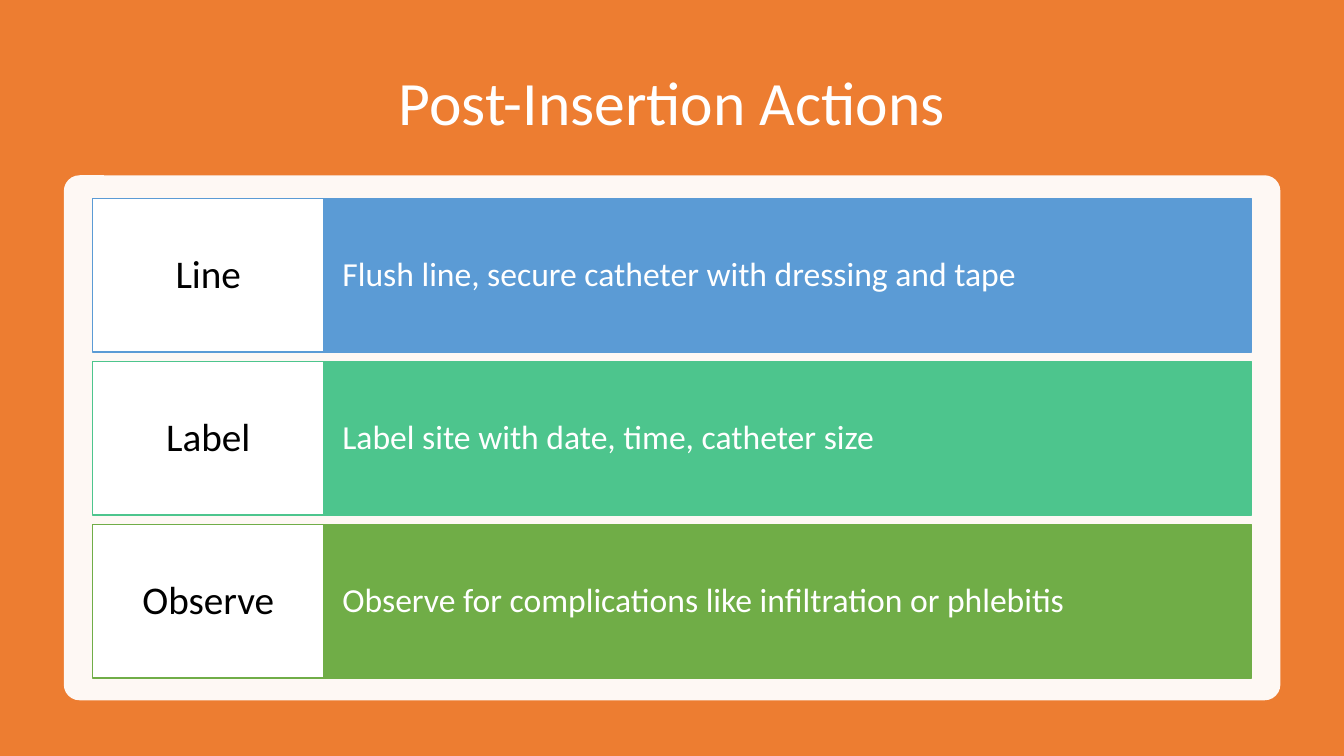
from lxml.etree import SubElement
from pptx import Presentation
from pptx.dml.color import RGBColor
from pptx.enum.shapes import MSO_SHAPE as Shape
from pptx.enum.text import MSO_ANCHOR as Anchor, PP_ALIGN as Align
from pptx.oxml.ns import qn
from pptx.util import Pt

COLORS = {
    "orange": "ED7D31",
    "blue": "5B9BD5",
    "teal": "4DC58D",
    "green": "70AD47",
    "white": "FFFFFF",
    "black": "000000",
}
TITLE = "Post-Insertion Actions"
ACTIONS = [
    ("Line", "Flush line, secure catheter with dressing and tape", "blue"),
    ("Label", "Label site with date, time, catheter size", "teal"),
    ("Observe", "Observe for complications like infiltration or phlebitis", "green"),
]

WIDTH, HEIGHT = 960, 540
LEFT, TOP = 66, 142
NAME_W, TEXT_W = 165.6, 662.4
ROW_H, PITCH = 109.4, 116.4


def color(name):
    return RGBColor.from_string(COLORS[name])


def add_box(kind, x, y, w, h, fill, line=None):
    box = slide.shapes.add_shape(kind, Pt(x), Pt(y), Pt(w), Pt(h))
    box.shadow.inherit = False
    box.fill.solid()
    box.fill.fore_color.rgb = color(fill)
    if line:
        box.line.color.rgb = color(line)
        box.line.width = Pt(1)
    else:
        box.line.fill.background()
    return box


def write(shape, text, size, ink, align, pad=(7.2, 3.6)):
    """Put one line of text in a shape; pad is the side and top inset."""
    frame = shape.text_frame
    frame.word_wrap = True
    frame.vertical_anchor = Anchor.MIDDLE
    frame.margin_left = frame.margin_right = Pt(pad[0])
    frame.margin_top = frame.margin_bottom = Pt(pad[1])
    frame.text = text
    para = frame.paragraphs[0]
    para.alignment = align
    para.line_spacing = 0.9
    para.font.name = "Calibri"
    para.font.size = Pt(size)
    para.font.color.rgb = color(ink)


deck = Presentation()
deck.slide_width, deck.slide_height = Pt(WIDTH), Pt(HEIGHT)
slide = deck.slides.add_slide(deck.slide_layouts[5])

title = slide.shapes.title
title.left, title.top, title.width, title.height = Pt(LEFT), Pt(36), Pt(828), Pt(79)
write(title, TITLE, 44, "white", Align.CENTER)

back = add_box(Shape.RECTANGLE, 0, 0, WIDTH, HEIGHT, "orange")
title.element.addprevious(back.element)

panel = add_box(Shape.ROUNDED_RECTANGLE, 45.6, 125.2, 869, 375, "white")
panel.adjustments[0] = 0.03
tint = panel.element.spPr.find(qn("a:solidFill"))[0]
SubElement(tint, qn("a:alpha"), val="95000")

for row, (name, text, hue) in enumerate(ACTIONS):
    y = TOP + row * PITCH
    bar = add_box(Shape.RECTANGLE, LEFT + NAME_W, y, TEXT_W, ROW_H, hue, hue)
    write(bar, text, 24, "white", Align.LEFT, (13, 28))
    tag = add_box(Shape.RECTANGLE, LEFT, y, NAME_W, ROW_H, "white", hue)
    write(tag, name, 28, "black", Align.CENTER, (8.6, 10.8))

deck.save("out.pptx")
